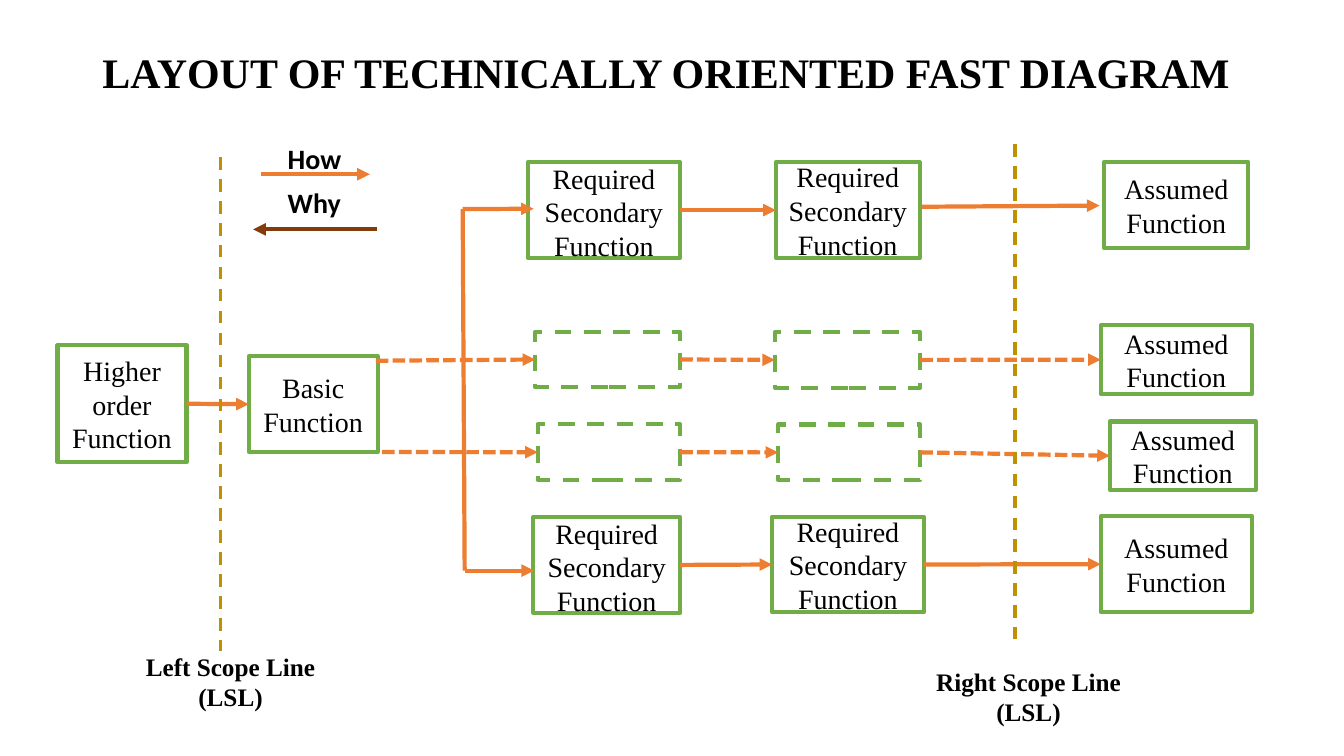
from dataclasses import dataclass
from typing import NamedTuple, Optional, Union

from lxml import etree
from pptx import Presentation
from pptx import util as u
from pptx.dml.color import RGBColor
from pptx.enum import dml, shapes, text
from pptx.oxml import ns

Dash = dml.MSO_LINE
Align = text.PP_ALIGN


@dataclass(frozen=True)
class Theme:
    """Colours, fonts and point sizes of the slide."""
    ink: str = "000000"
    paper: str = "FFFFFF"
    green: str = "70AD47"
    orange: str = "ED7D31"
    brown: str = "843C0B"
    gold: str = "BF9000"
    serif: str = "Times New Roman"
    sans: str = "Calibri"
    title: int = 30
    body: int = 20
    note: int = 18
    bold: float = 3
    thin: float = 2.25


class Box(NamedTuple):
    """A function box, in centimetres; without words it is dashed."""
    key: str
    x: float
    y: float
    w: float
    h: float
    words: str = ""
    drop: float = 0.13


class Join(NamedTuple):
    """The middle of one side of a box."""
    key: str
    side: int


class Point(NamedTuple):
    """A free end, in centimetres."""
    x: float
    y: float


class Link(NamedTuple):
    """A line between two ends."""
    a: Union[Join, Point]
    b: Union[Join, Point]
    dash: Optional[Dash] = None
    color: str = Theme.orange
    width: float = Theme.bold
    arrow: bool = True


class Label(NamedTuple):
    """Free text, in centimetres."""
    words: str
    x: float
    y: float
    w: float
    h: float
    size: int
    font: str = Theme.serif
    align: Align = Align.CENTER
    space: float = 1.0


T = Theme()
LEFT, RIGHT = 1, 3
NEED = "Required Secondary Function"
GOAL = "Assumed Function"

BOXES = [
    Box("high", 1.45, 8.7, 3.25, 2.95, "Higher order Function"),
    Box("base", 6.27, 8.98, 3.25, 2.41, "Basic Function"),
    Box("a1", 13.3, 4.09, 3.84, 2.41, NEED, 0.2),
    Box("b1", 19.55, 4.09, 3.63, 2.41, NEED),
    Box("c1", 27.83, 4.08, 3.63, 2.18, GOAL),
    Box("a2", 13.49, 8.36, 3.65, 1.4),
    Box("b2", 19.53, 8.37, 3.66, 1.4),
    Box("c2", 27.74, 8.2, 3.81, 1.73, GOAL),
    Box("a3", 13.55, 10.69, 3.59, 1.41),
    Box("b3", 19.61, 10.7, 3.58, 1.4),
    Box("c3", 27.97, 10.62, 3.68, 1.73, GOAL),
    Box("a4", 13.44, 13.03, 3.7, 2.41, NEED, 0.22),
    Box("b4", 19.46, 13.02, 3.82, 2.41, NEED),
    Box("c4", 27.74, 13.01, 3.81, 2.41, GOAL),
]

SPLIT, FOOT = Point(11.66, 5.27), Point(11.71, 14.38)
CHAIN = [("high", "base", None), ("a1", "b1", None),
         ("a4", "b4", None), ("b4", "c4", None)]
CHAIN += [(f"{p}{row}", f"{q}{row}", Dash.SQUARE_DOT)
          for row in (2, 3) for p, q in ("ab", "bc")]

LINKS = [Link(Join(p, RIGHT), Join(q, LEFT), dash) for p, q, dash in CHAIN]
LINKS += [
    Link(Point(9.47, 9.09), Join("a2", LEFT), Dash.SQUARE_DOT),
    Link(Point(9.63, 11.39), Join("a3", LEFT), Dash.SQUARE_DOT),
    Link(SPLIT, FOOT, arrow=False),
    Link(SPLIT, Point(13.45, 5.26)),
    Link(FOOT, Point(13.46, 14.38)),
    Link(Point(23.24, 5.21), Point(27.71, 5.18)),
    Link(Point(6.58, 4.39), Point(9.32, 4.39)),
    Link(Point(9.5, 5.78), Point(6.38, 5.78), color=T.brown),
    Link(Point(5.56, 3.96), Point(5.56, 16.41), Dash.DASH, T.gold, T.thin, False),
    Link(Point(25.58, 3.64), Point(25.58, 16.1), Dash.DASH, T.gold, T.thin, False),
]

LABELS = [
    Label("LAYOUT OF TECHNICALLY ORIENTED FAST DIAGRAM", 2.33, 1.02, 29.21, 1.73,
          T.title, align=Align.LEFT, space=0.9),
    Label("How", 7, 3.43, 2.01, 1.12, T.body, T.sans, Align.LEFT),
    Label("Why", 7, 4.55, 1.9, 1.12, T.body, T.sans, Align.LEFT),
    Label("Left Scope Line (LSL)", 3.08, 16.28, 5.46, 1.8, T.note),
    Label("Right Scope Line (LSL)", 23.19, 16.65, 5.46, 1.8, T.note),
]


def write(frame, words: str, size: int, font: str, align: Align, bold: bool) -> None:
    """Put one styled run in a text frame."""
    frame.word_wrap = True
    frame.vertical_anchor = text.MSO_ANCHOR.MIDDLE
    para = frame.paragraphs[0]
    para.alignment = align
    run = para.add_run()
    run.text = words
    run.font.size, run.font.name, run.font.bold = u.Pt(size), font, bold
    run.font.color.rgb = RGBColor.from_string(T.ink)


def stroke(line, color: str, width: float, dash: Optional[Dash]) -> None:
    """Set colour, width and dash of a line."""
    line.color.rgb = RGBColor.from_string(color)
    line.width = u.Pt(width)
    if dash is not None:
        line.dash_style = dash


def draw_box(slide, box: Box):
    """Draw one function box and return it."""
    shape = slide.shapes.add_shape(
        shapes.MSO_SHAPE.RECTANGLE, *map(u.Cm, (box.x, box.y, box.w, box.h)))
    shape.shadow.inherit = False
    shape.fill.solid()
    shape.fill.fore_color.rgb = RGBColor.from_string(T.paper)
    stroke(shape.line, T.green, T.bold, None if box.words else Dash.DASH)
    if box.words:
        shape.text_frame.margin_top = u.Cm(box.drop)
        write(shape.text_frame, box.words, T.body, T.serif, Align.CENTER, False)
    return shape


def draw_link(slide, link: Link, made: dict) -> None:
    """Draw one line and join it to its boxes."""
    ends = [u.Cm(v) for end in (link.a, link.b)
            for v in (end if isinstance(end, Point) else (0, 0))]
    wire = slide.shapes.add_connector(shapes.MSO_CONNECTOR.STRAIGHT, *ends)
    for end, join in ((link.a, wire.begin_connect), (link.b, wire.end_connect)):
        if isinstance(end, Join):
            join(made[end.key], end.side)
    stroke(wire.line, link.color, link.width, link.dash)
    props = wire.element.spPr
    if link.arrow:
        etree.SubElement(props.find(ns.qn("a:ln")), ns.qn("a:tailEnd"), type="triangle")
    etree.SubElement(props, ns.qn("a:effectLst"))


def draw_label(slide, label: Label) -> None:
    """Draw one bold text box."""
    frame = slide.shapes.add_textbox(
        *map(u.Cm, (label.x, label.y, label.w, label.h))).text_frame
    write(frame, label.words, label.size, label.font, label.align, True)
    frame.paragraphs[0].line_spacing = label.space


def main() -> None:
    """Build and save the slide."""
    deck = Presentation()
    deck.slide_width, deck.slide_height = u.Cm(33.87), u.Cm(19.05)
    slide = deck.slides.add_slide(deck.slide_layouts[6])
    made = {box.key: draw_box(slide, box) for box in BOXES}
    for link in LINKS:
        draw_link(slide, link, made)
    for label in LABELS:
        draw_label(slide, label)
    deck.save("out.pptx")


if __name__ == "__main__":
    main()
